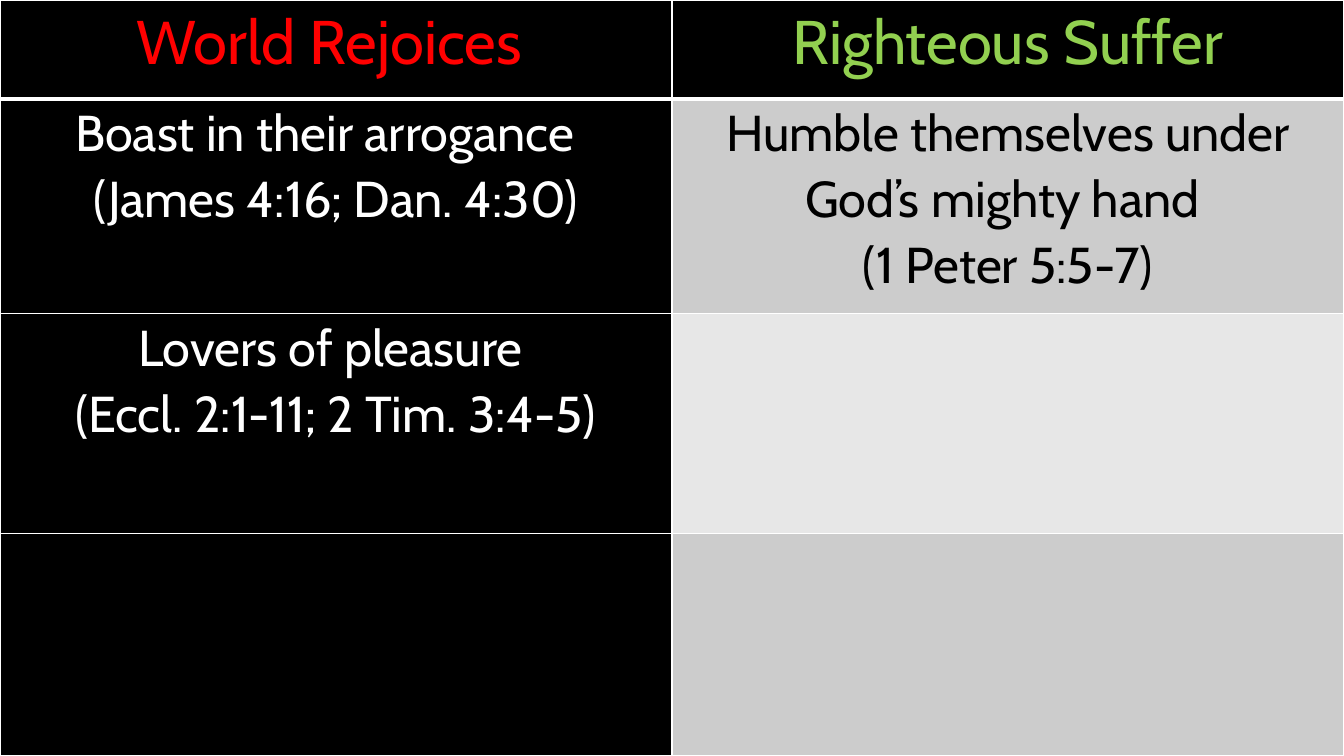
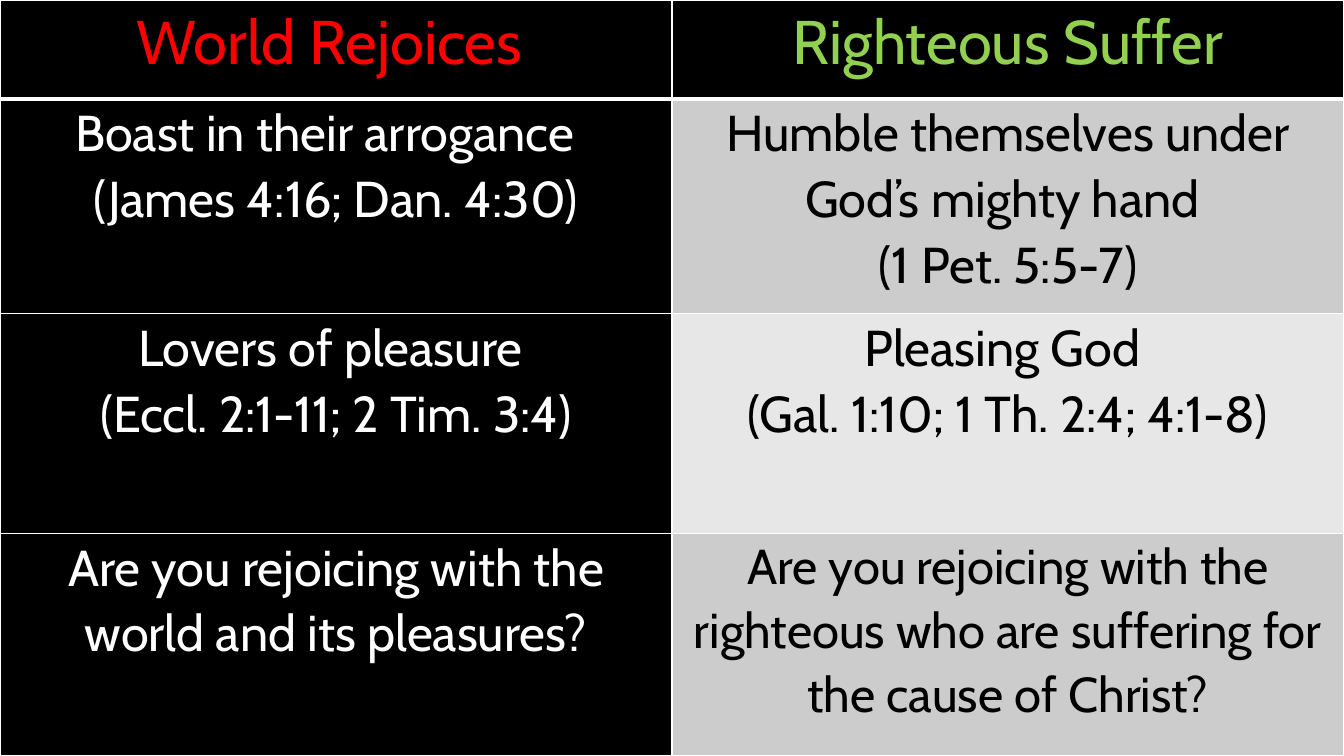
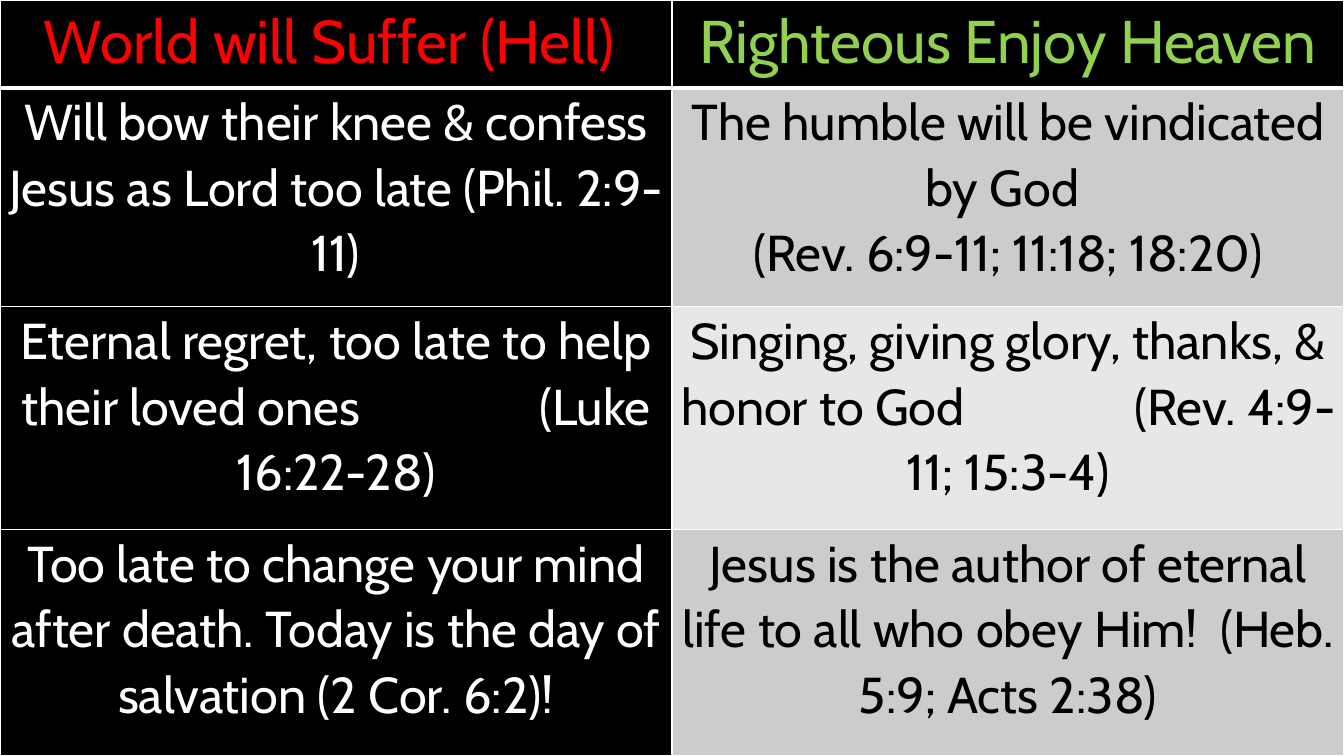
from lxml import etree
from pptx import Presentation
from pptx.dml.color import RGBColor
from pptx.enum.text import PP_ALIGN
from pptx.oxml.ns import qn
from pptx.util import Inches, Pt

CENTER = PP_ALIGN.CENTER
SLIDE_W, SLIDE_H = 13.33, 7.5
BLANK_LAYOUT = 6
FONT = "Cabin"
BODY_SIZE = 36
LINE_SPACING = 1.07
SIDE_MARGIN = 0.07
THIN, THICK = 1, 3
COLORS = {
    "black": "000000",
    "white": "FFFFFF",
    "world": "FF0000",
    "righteous": "92D050",
    "band_dark": "CCCCCC",
    "band_light": "E7E7E7",
}

WORLD_HEADER = "World Rejoices "
RIGHTEOUS_HEADER = "Righteous Suffer"
BOAST = ["Boast in their arrogance  ", "(James 4:16; Dan. 4:30)"]
PLEASURE = "Lovers of pleasure "
HUMBLE = "Humble themselves under God’s mighty hand "

REJOICE_HEIGHTS = [0.98, 2.13, 2.18, 2.21]
HEAVEN_HEIGHTS = [0.87, 2.17, 2.21, 2.25]

# Each body cell is a list of paragraphs.
SLIDES = [
    {
        "headers": [WORLD_HEADER, RIGHTEOUS_HEADER],
        "header_size": 44,
        "heights": REJOICE_HEIGHTS,
        "body": [
            [BOAST, [HUMBLE, "(1 Peter 5:5-7)"]],
            [[PLEASURE, "(Eccl. 2:1-11; 2 Tim. 3:4-5)"], []],
            [[], []],
        ],
    },
    {
        "headers": [WORLD_HEADER, RIGHTEOUS_HEADER],
        "header_size": 44,
        "heights": REJOICE_HEIGHTS,
        "body": [
            [BOAST, [HUMBLE, "(1 Pet. 5:5-7)"]],
            [[PLEASURE, "(Eccl. 2:1-11; 2 Tim. 3:4)"],
             ["Pleasing God ", "(Gal. 1:10; 1 Th. 2:4; 4:1-8)"]],
            [["Are you rejoicing with the world and its pleasures?"],
             ["Are you rejoicing with the righteous who are suffering "
              "for the cause of Christ?"]],
        ],
        "sizes": {(3, 1): 35},
    },
    {
        "headers": ["World will Suffer (Hell) ", "Righteous Enjoy Heaven"],
        "header_size": 43,
        "heights": HEAVEN_HEIGHTS,
        "body": [
            [["Will bow their knee & confess Jesus as Lord too late "
              "(Phil. 2:9-11)"],
             ["The humble will be vindicated by God ",
              "(Rev. 6:9-11; 11:18; 18:20)"]],
            [["Eternal regret, too late to help their loved ones\t"
              "(Luke 16:22-28)"],
             ["Singing, giving glory, thanks, & honor to God\t"
              "(Rev. 4:9-11; 15:3-4)"]],
            [["Too late to change your mind after death. Today is the day "
              "of salvation (2 Cor. 6:2)!"],
             ["Jesus is the author of eternal life to all who obey Him!  "
              "(Heb. 5:9; Acts 2:38)"]],
        ],
        "tabs": {(2, 0): 5.14, (2, 1): 4.5},
    },
]


def rgb(name):
    return RGBColor.from_string(COLORS[name])


def set_borders(cell, top, bottom):
    tcPr = cell._tc.get_or_add_tcPr()
    for side, width in (("L", THIN), ("R", THIN), ("T", top), ("B", bottom)):
        ln = etree.SubElement(tcPr, qn(f"a:ln{side}"), w=str(Pt(width)))
        fill = etree.SubElement(ln, qn("a:solidFill"))
        etree.SubElement(fill, qn("a:srgbClr"), val=COLORS["white"])


def add_tab_stop(p, position):
    tabs = etree.SubElement(p._p.get_or_add_pPr(), qn("a:tabLst"))
    etree.SubElement(tabs, qn("a:tab"), pos=str(Inches(position)), algn="l")


def write_cell(cell, paragraphs, size, color, tab=None):
    cell.margin_left = cell.margin_right = Inches(SIDE_MARGIN)
    cell.margin_top = cell.margin_bottom = 0
    tf = cell.text_frame
    for i, text in enumerate(paragraphs):
        p = tf.add_paragraph() if i else tf.paragraphs[0]
        p.alignment = CENTER
        p.line_spacing = LINE_SPACING
        if tab:
            add_tab_stop(p, tab)
        r = p.add_run()
        r.text = text
        r.font.name = FONT
        r.font.size = Pt(size)
        r.font.color.rgb = rgb(color)


def cell_colors(row, col):
    """Return the fill and text colour names for a place in the table."""
    if row == 0:
        return "black", ("world", "righteous")[col]
    if col == 0:
        return "black", "white"
    return ("band_dark" if row % 2 else "band_light"), "black"


def add_comparison(prs, content):
    s = prs.slides.add_slide(prs.slide_layouts[BLANK_LAYOUT])
    s.background.fill.solid()
    s.background.fill.fore_color.rgb = rgb("black")

    rows = [[[header] for header in content["headers"]]] + content["body"]
    table = s.shapes.add_table(len(rows), 2, 0, 0, Inches(SLIDE_W),
                               Inches(SLIDE_H)).table
    table.first_row = table.horz_banding = False
    for column in table.columns:
        column.width = Inches(SLIDE_W / 2)

    for i, (row, height) in enumerate(zip(rows, content["heights"])):
        table.rows[i].height = Inches(height)
        for j, paragraphs in enumerate(row):
            cell = table.cell(i, j)
            fill, color = cell_colors(i, j)
            set_borders(cell, top=THICK if i == 1 else THIN,
                        bottom=THICK if i == 0 else THIN)
            cell.fill.solid()
            cell.fill.fore_color.rgb = rgb(fill)
            size = content["header_size"] if i == 0 else BODY_SIZE
            size = content.get("sizes", {}).get((i, j), size)
            write_cell(cell, paragraphs, size, color,
                       content.get("tabs", {}).get((i, j)))


def main():
    prs = Presentation()
    prs.slide_width = Inches(SLIDE_W)
    prs.slide_height = Inches(SLIDE_H)
    for content in SLIDES:
        add_comparison(prs, content)
    prs.save("out.pptx")


if __name__ == "__main__":
    main()
